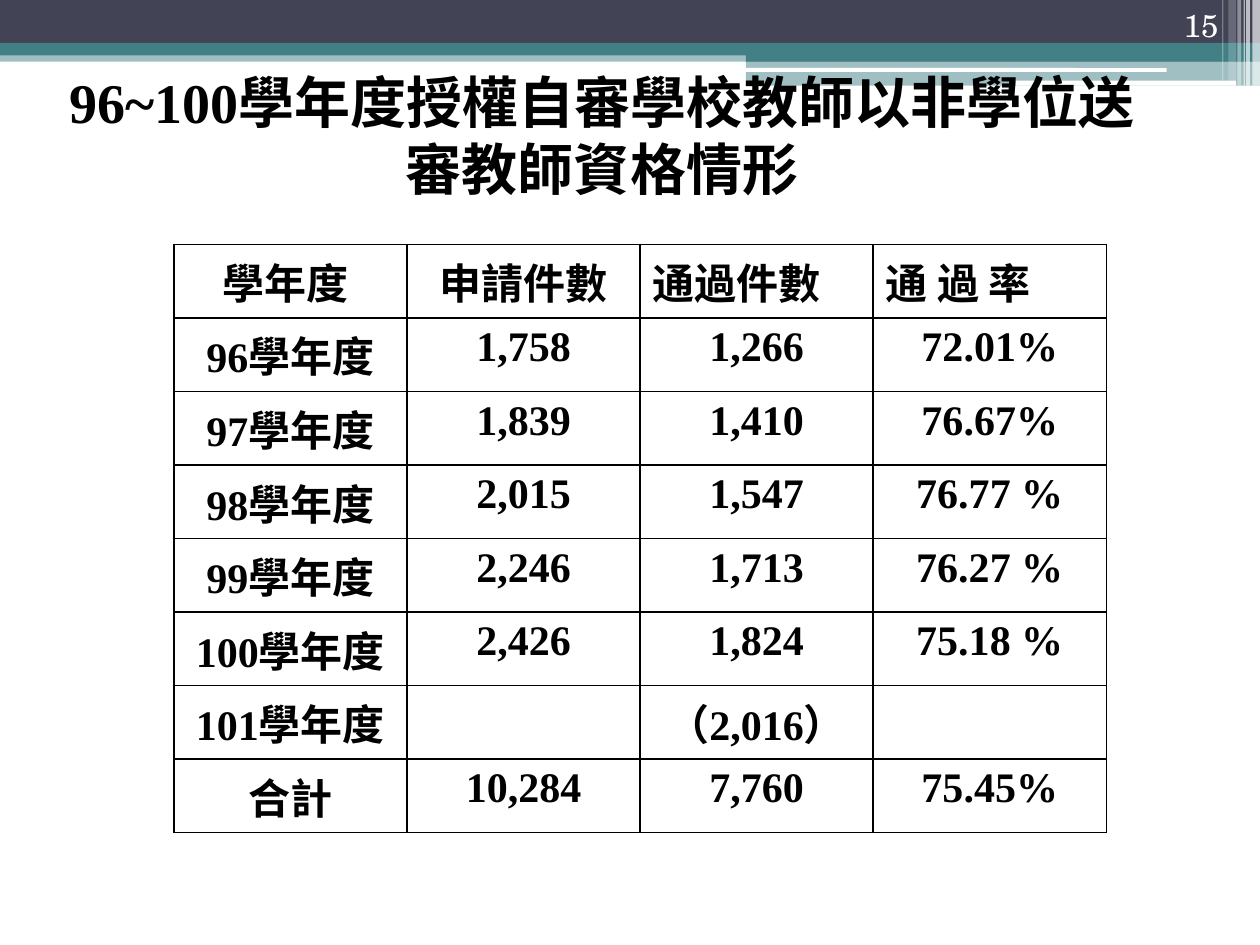
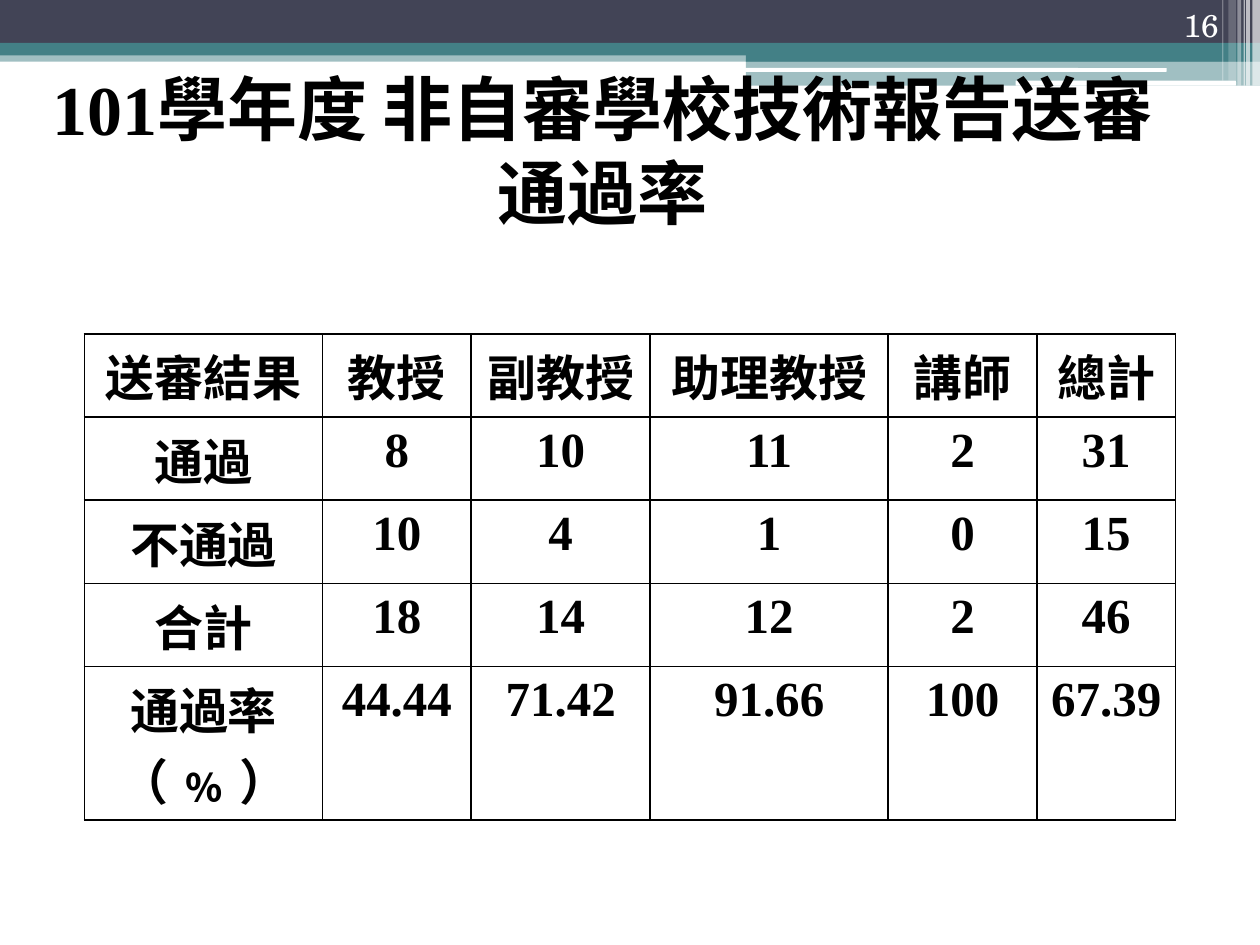
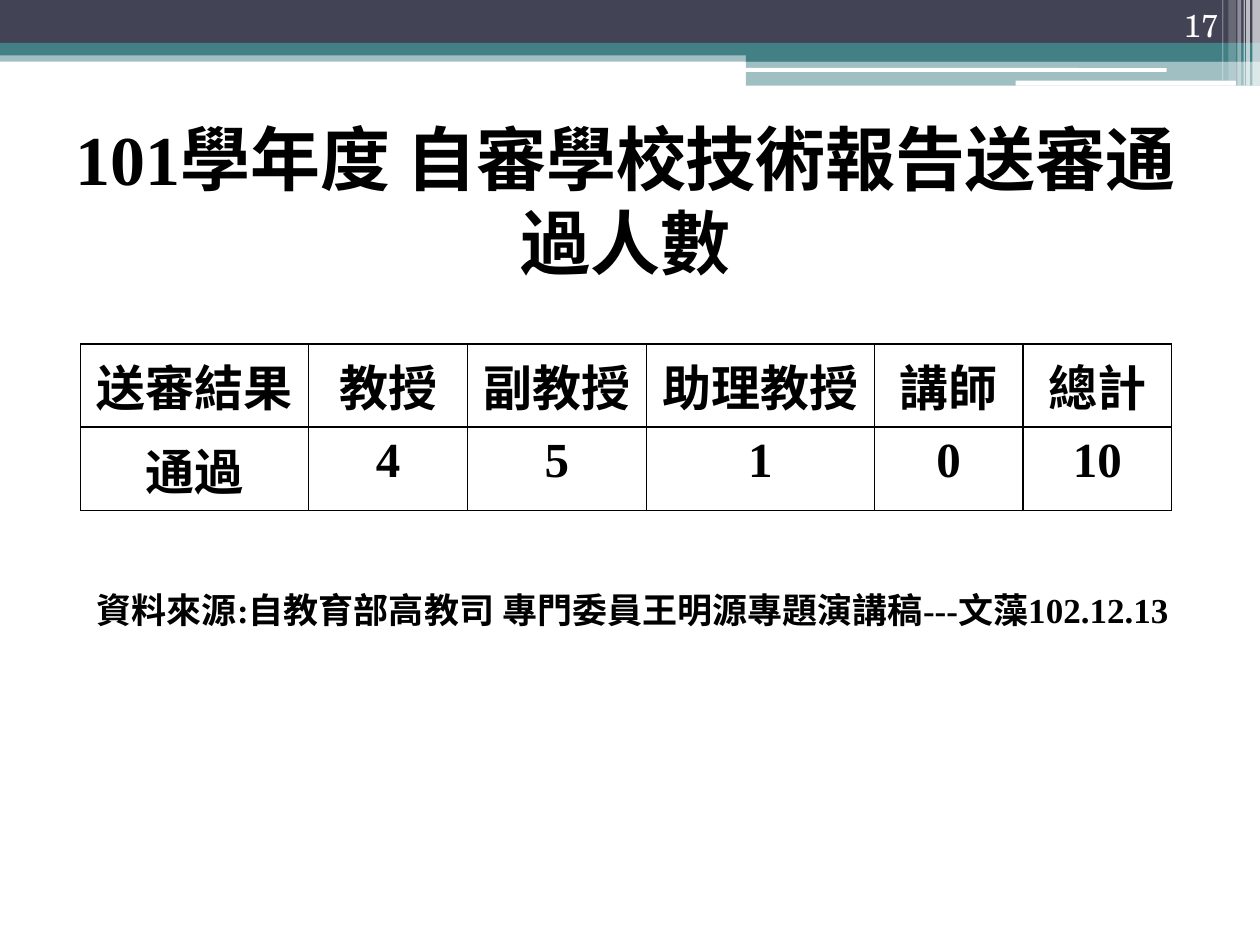
"""Build three slides on teacher qualification review results."""
from dataclasses import dataclass

import pptx
import pptx.dml.color
import pptx.enum.shapes
import pptx.enum.text
import pptx.oxml
import pptx.oxml.ns
import pptx.util

Inches = pptx.util.Inches
Pt = pptx.util.Pt
RGB = pptx.dml.color.RGBColor.from_string
SHAPE = pptx.enum.shapes.MSO_SHAPE
ALIGN = pptx.enum.text.PP_ALIGN
ANCHOR = pptx.enum.text.MSO_ANCHOR
NS = pptx.oxml.ns.nsdecls("a")


@dataclass(frozen=True)
class Theme:
    navy: str = "424456"
    teal: str = "438086"
    white: str = "FFFFFF"
    ink: str = "000000"
    font: str = "Times New Roman"
    number_font: str = "TeX Gyre Schola"
    long_title_size: int = 32
    title_size: int = 40
    long_table_size: int = 24
    table_size: int = 28
    number_size: int = 18
    note_size: int = 20
    border: int = 1


T = Theme()

BANDS = [
    (SHAPE.RECTANGLE, 0, 0.4, 10, 0.09, T.teal, 50),
    (SHAPE.RECTANGLE, 0, 0, 10, 0.34, T.navy, 100),
    (SHAPE.RECTANGLE, 0, 0.34, 10, 0.1, T.teal, 100),
    (SHAPE.RECTANGLE, 5.92, 0.39, 4.08, 0.1, T.teal, 100),
    (SHAPE.RECTANGLE, 5.92, 0.48, 4.08, 0.2, T.teal, 50),
    (SHAPE.ROUNDED_RECTANGLE, 5.91, 0.54, 3.35, 0.03, T.white, 100),
    (SHAPE.ROUNDED_RECTANGLE, 8.06, 0.64, 1.75, 0.04, T.white, 100),
]
STRIPES = [
    (9.94, 0.06, 0.68, 65),
    (9.89, 0.03, 0.68, 65),
    (9.87, 0.01, 0.68, 60),
    (9.82, 0.03, 0.68, 40),
    (9.75, 0.06, 0.64, 20),
    (9.7, 0.01, 0.64, 30),
]
BANDS += [(SHAPE.RECTANGLE, x, 0, w, h, T.white, alpha) for x, w, h, alpha in STRIPES]

RANKS = ["送審結果", "教授", "副教授", "助理教授", "講師", "總計"]
SLIDES = [
    {
        "number": "15",
        "title": "96~100學年度授權自審學校教師以非學位送審教師資格情形",
        "title_box": (0.28, 0.52, 9, 1.1),
        "title_size": T.long_title_size,
        "table_at": (1.38, 1.94),
        "table_size": T.long_table_size,
        "cols": [1.85] * 4,
        "heights": [4.67 / 8] * 8,
        "left_heads": (2, 3),
        "rows": [
            ["學年度 ", "申請件數", "通過件數", "通 過 率"],
            ["96學年度", "1,758", "1,266", "72.01%"],
            ["97學年度", "1,839", "1,410", "76.67%"],
            ["98學年度", "2,015", "1,547", "76.77 %"],
            ["99學年度", "2,246", "1,713", "76.27 %"],
            ["100學年度", "2,426", "1,824", "75.18 %"],
            ["101學年度", "", "（2,016）", ""],
            ["合計", "10,284", "7,760", "75.45%"],
        ],
    },
    {
        "number": "16",
        "title": "101學年度 非自審學校技術報告送審通過率",
        "title_box": (0.28, 0.6, 9, 1.18),
        "title_size": T.title_size,
        "table_at": (0.67, 2.65),
        "table_size": T.table_size,
        "cols": [1.89, 1.18, 1.42, 1.89, 1.18, 1.1],
        "heights": [0.66] * 4 + [1.22],
        "rows": [
            RANKS,
            ["通過", "8", "10", "11", "2", "31"],
            ["不通過", "10", "4", "1", "0", "15"],
            ["合計", "18", "14", "12", "2", "46"],
            ["通過率\n（ ﹪ ）", "44.44", "71.42", "91.66", "100", "67.39"],
        ],
    },
    {
        "number": "17",
        "title": "101學年度 自審學校技術報告送審通過人數",
        "title_box": (0.28, 0.99, 9.37, 1.18),
        "title_size": T.title_size,
        "table_at": (0.64, 2.73),
        "table_size": T.table_size,
        "cols": [1.81, 1.26, 1.42, 1.81, 1.18, 1.18],
        "heights": [0.66] * 2,
        "rows": [RANKS, ["通過", "4", "5", "1", "0", "10"]],
        "note": "資料來源:自教育部高教司 專門委員王明源專題演講稿---文藻102.12.13",
        "note_box": (0.67, 4.62, 8.82, 0.44),
    },
]


def write(tf, text, size, align=ALIGN.CENTER, color=T.ink, font=T.font, bold=True):
    for i, line in enumerate(text.split("\n")):
        p = tf.add_paragraph() if i else tf.paragraphs[0]
        p.alignment = align
        r = p.add_run()
        r.text = line
        r.font.size = Pt(size)
        r.font.name = font
        r.font.bold = bold
        r.font.color.rgb = RGB(color)


def add_text(s, box, anchor, text, size, **style):
    tf = s.shapes.add_textbox(*map(Inches, box)).text_frame
    tf.word_wrap = True
    tf.vertical_anchor = anchor
    write(tf, text, size, **style)


prs = pptx.Presentation()
prs.slide_width = Inches(10)
prs.slide_height = Inches(7.5)

for page in SLIDES:
    s = prs.slides.add_slide(prs.slide_layouts[6])

    for kind, x, y, w, h, color, alpha in BANDS:
        sp = s.shapes.add_shape(kind, *map(Inches, (x, y, w, h)))
        sp.shadow.inherit = False
        sp.line.fill.background()
        sp.fill.solid()
        sp.fill.fore_color.rgb = RGB(color)
        if alpha < 100:
            clr = sp.fill._xPr.find(".//" + pptx.oxml.ns.qn("a:srgbClr"))
            clr.append(pptx.oxml.parse_xml(f'<a:alpha {NS} val="{alpha * 1000}"/>'))

    add_text(s, page["title_box"], ANCHOR.MIDDLE, page["title"], page["title_size"])

    cols, heights = page["cols"], page["heights"]
    area = (*page["table_at"], sum(cols), sum(heights))
    table = s.shapes.add_table(len(heights), len(cols), *map(Inches, area)).table
    table.first_row = table.horz_banding = False
    for col, w in zip(table.columns, cols):
        col.width = Inches(w)
    for row, h in zip(table.rows, heights):
        row.height = Inches(h)
    for i, values in enumerate(page["rows"]):
        for j, value in enumerate(values):
            cell = table.cell(i, j)
            left = i == 0 and j in page.get("left_heads", ())
            if value:
                write(cell.text_frame, value, page["table_size"],
                      align=ALIGN.LEFT if left else ALIGN.CENTER)
            tcPr = cell._tc.get_or_add_tcPr()
            for side in ("lnL", "lnR", "lnT", "lnB"):
                tcPr.append(pptx.oxml.parse_xml(
                    f'<a:{side} {NS} w="{Pt(T.border)}"><a:solidFill>'
                    f'<a:srgbClr val="{T.ink}"/></a:solidFill></a:{side}>'))
            cell.fill.background()

    add_text(s, (8.94, 0, 0.83, 0.4), ANCHOR.BOTTOM, page["number"], T.number_size,
             align=ALIGN.RIGHT, color=T.white, font=T.number_font, bold=False)
    if "note" in page:
        add_text(s, page["note_box"], ANCHOR.TOP, page["note"], T.note_size, align=ALIGN.LEFT)

prs.save("out.pptx")
